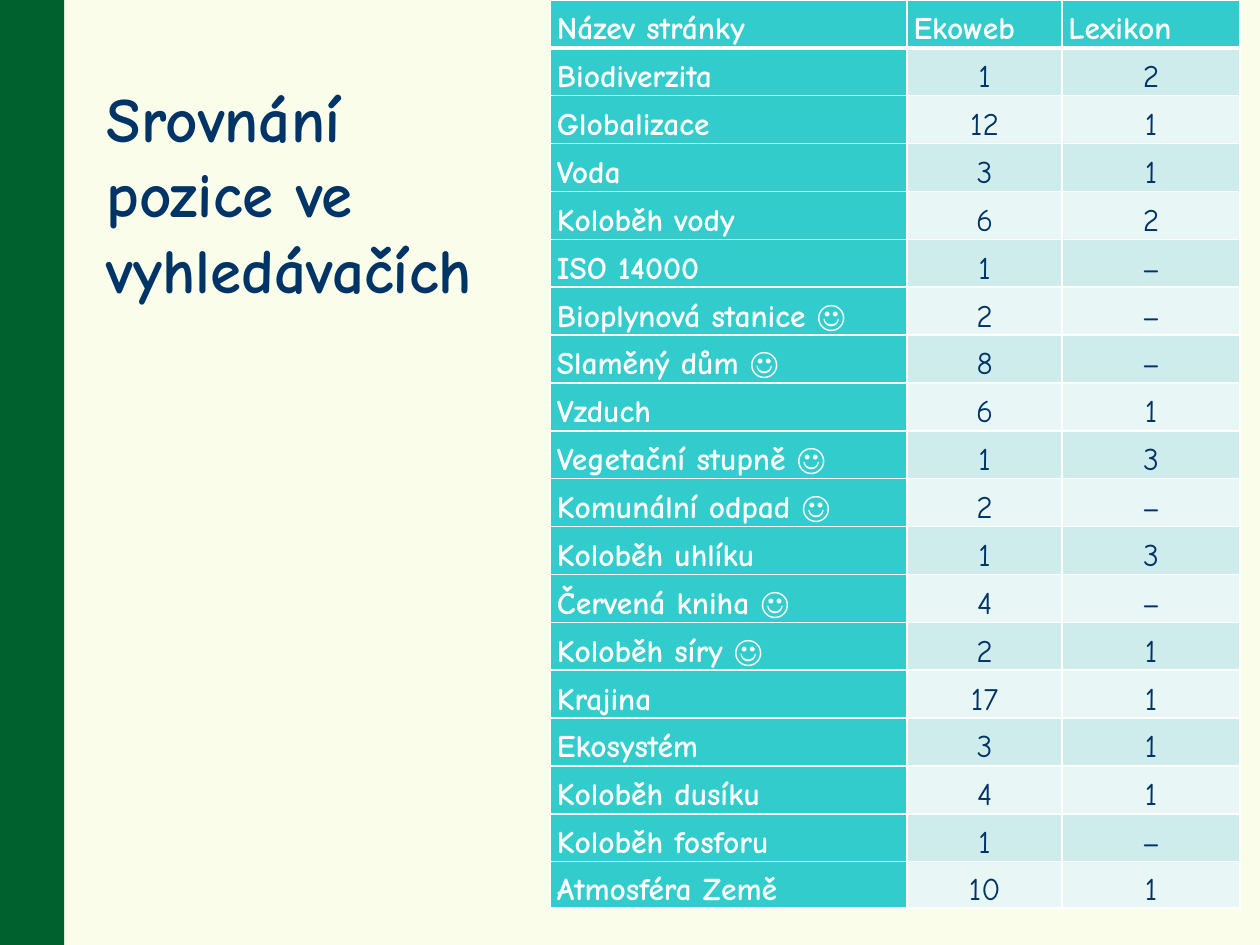
from lxml import etree
from pptx import Presentation
from pptx import util as u
from pptx.dml.color import RGBColor
from pptx.enum import shapes, text
from pptx.oxml.ns import qn

FONT = "Comic Neue"
HUES = {
    "page": "F9FDE9",
    "bar": "00612F",
    "navy": "003366",
    "white": "FFFFFF",
    "teal": "33CCCC",
    "dark": "CEECEC",
    "light": "E8F6F6",
}
HEAD = ("Název stránky", "Ekoweb", "Lexikon")
ROWS = [
    ("Biodiverzita", "1", "2"),
    ("Globalizace", "12", "1"),
    ("Voda", "3", "1"),
    ("Koloběh vody", "6", "2"),
    ("ISO 14000", "1", "–"),
    ("Bioplynová stanice ☺", "2", "–"),
    ("Slaměný dům ☺", "8", "–"),
    ("Vzduch", "6", "1"),
    ("Vegetační stupně ☺", "1", "3"),
    ("Komunální odpad ☺", "2", "–"),
    ("Koloběh uhlíku", "1", "3"),
    ("Červená kniha ☺", "4", "–"),
    ("Koloběh síry ☺", "2", "1"),
    ("Krajina", "17", "1"),
    ("Ekosystém", "3", "1"),
    ("Koloběh dusíku", "4", "1"),
    ("Koloběh fosforu", "1", "–"),
    ("Atmosféra Země", "10", "1"),
]
WIDTHS = (2.83, 1.23, 1.41)
TALL, LAST = 0.38, 0.37


def hue(name):
    return RGBColor.from_string(HUES[name])


def paint(fill, name):
    fill.solid()
    fill.fore_color.rgb = hue(name)


def write(frame, words, size=18, color="navy", bold=False, align=text.PP_ALIGN.LEFT):
    par = frame.paragraphs[0]
    par.alignment = align
    run = par.add_run()
    run.text = words
    run.font.name = FONT
    run.font.size = u.Pt(size)
    run.font.bold = bold
    run.font.color.rgb = hue(color)


def edge(cell, top=1, bottom=1):
    props = cell._tc.get_or_add_tcPr()
    for side, width in (("L", 1), ("R", 1), ("T", top), ("B", bottom)):
        line = etree.SubElement(props, qn(f"a:ln{side}"), w=str(u.Pt(width)))
        fill = etree.SubElement(line, qn("a:solidFill"))
        etree.SubElement(fill, qn("a:srgbClr"), val=HUES["white"])


def add_bar(slide):
    bar = slide.shapes.add_shape(
        shapes.MSO_SHAPE.RECTANGLE, 0, 0, u.Inches(0.51), u.Inches(7.5))
    bar.shadow.inherit = False
    paint(bar.fill, "bar")
    bar.line.fill.background()


def add_title(slide, words):
    box = slide.shapes.add_textbox(
        u.Inches(0.75), u.Inches(0.58), u.Inches(3.54), u.Inches(1.92))
    box.text_frame.word_wrap = True
    write(box.text_frame, words, size=36, bold=True)


def fill_cell(cell, words, row, col):
    cell.margin_left = cell.margin_right = u.Inches(0.05)
    cell.margin_top = cell.margin_bottom = 0
    cell.vertical_anchor = text.MSO_ANCHOR.BOTTOM
    edge(cell, top=3 if row == 1 else 1, bottom=3 if row == 0 else 1)
    if row == 0 or col == 0:
        paint(cell.fill, "teal")
        write(cell.text_frame, words, color="white", bold=True,
              align=text.PP_ALIGN.JUSTIFY)
    else:
        paint(cell.fill, "dark" if row % 2 else "light")
        write(cell.text_frame, words, align=text.PP_ALIGN.CENTER)


def add_ranks(slide):
    data = [HEAD] + ROWS
    high = TALL * (len(data) - 1) + LAST
    table = slide.shapes.add_table(
        len(data), len(HEAD), u.Inches(4.37), 0,
        u.Inches(sum(WIDTHS)), u.Inches(high)).table
    table.horz_banding = False
    table.first_col = True
    for col, width in zip(table.columns, WIDTHS):
        col.width = u.Inches(width)
    for row in table.rows:
        row.height = u.Inches(TALL)
    table.rows[len(data) - 1].height = u.Inches(LAST)
    for row, items in enumerate(data):
        for col, words in enumerate(items):
            fill_cell(table.cell(row, col), words, row, col)


def main():
    deck = Presentation()
    deck.slide_width, deck.slide_height = u.Inches(10), u.Inches(7.5)
    slide = deck.slides.add_slide(deck.slide_layouts[6])
    paint(slide.background.fill, "page")
    add_bar(slide)
    add_ranks(slide)
    add_title(slide, "Srovnání pozice ve vyhledávačích")
    deck.save("out.pptx")


if __name__ == "__main__":
    main()
